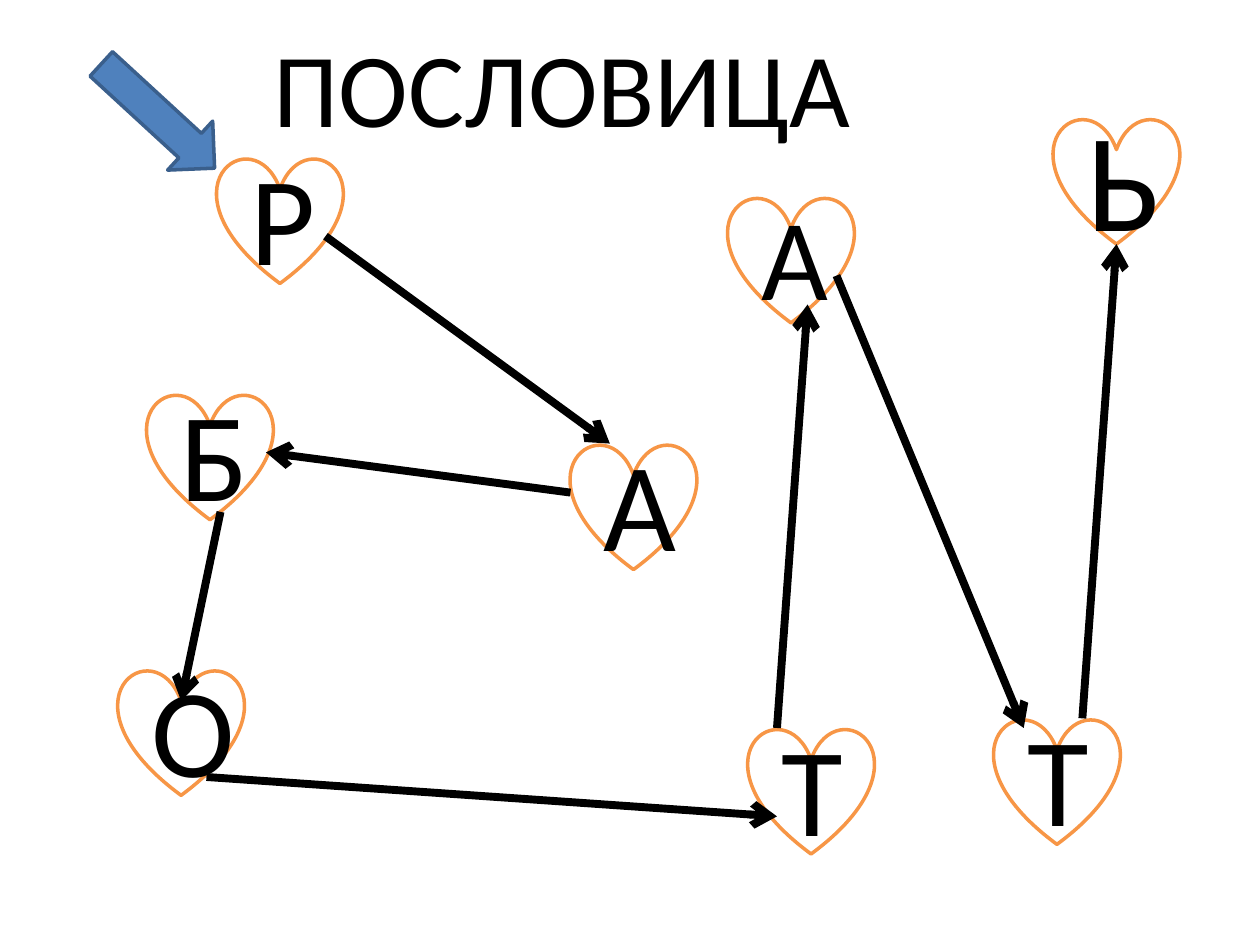
from lxml.etree import SubElement
from pptx import Presentation
from pptx.dml.color import RGBColor
from pptx.enum.shapes import MSO_CONNECTOR, MSO_SHAPE
from pptx.enum.text import MSO_ANCHOR, MSO_AUTO_SIZE, PP_ALIGN
from pptx.oxml.ns import qn
from pptx.util import Pt

COLORS = {"ink": "000000", "paper": "FFFFFF", "heart": "F79646",
          "start": "4F81BD", "start_edge": "3A5F8C"}
HEART_SIZE = 72

# Letter, left, top, letter size
HEARTS = [
    ("Р", 124, 90, 72),
    ("Б", 84, 225, 72),
    ("Т", 568, 410.5, 72),
    ("О", 67.5, 382.5, 72),
    ("А", 416, 112.5, 66),
    ("Ь", 602, 67.5, 80),
    ("А", 326, 253.5, 72),
    ("Т", 427.5, 416, 72),
]
# Steps in reading order: from, to
STEPS = [
    ((186, 135), (348.5, 253.5)),
    ((326, 281.5), (152, 258.5)),
    ((126, 292.5), (103.5, 400.5)),
    ((118, 444), (444, 466.5)),
    ((444, 416), (461.5, 174)),
    ((478, 157.5), (585, 416)),
    ((618.5, 410.5), (638, 139.5)),
]


def color(name):
    return RGBColor.from_string(COLORS[name])


def place(shape, box):
    for side, value in zip(("left", "top", "width", "height"), box):
        setattr(shape, side, Pt(value))


def write(frame, text, size):
    for name, value in {"text": text, "vertical_anchor": MSO_ANCHOR.MIDDLE,
                        "auto_size": MSO_AUTO_SIZE.NONE, "word_wrap": True}.items():
        setattr(frame, name, value)
    paragraph = frame.paragraphs[0]
    paragraph.alignment = PP_ALIGN.CENTER
    for name, value in {"name": "Calibri", "size": Pt(size)}.items():
        setattr(paragraph.font, name, value)
    paragraph.font.color.rgb = color("ink")


def add_outlined(slide, kind, box, fill, edge):
    shape = slide.shapes.add_shape(kind, *map(Pt, box))
    shape.shadow.inherit = False
    shape.fill.solid()
    shape.fill.fore_color.rgb = color(fill)
    shape.line.color.rgb = color(edge)
    shape.line.width = Pt(2)
    return shape


def add_title(slide, box):
    title = slide.shapes.title
    place(title, box)
    write(title.text_frame, "ПОСЛОВИЦА", 60)


def add_heart(slide, box, letter, size):
    heart = add_outlined(slide, MSO_SHAPE.HEART, box, "paper", "heart")
    write(heart.text_frame, letter, size)


def add_step(slide, start, end):
    step = slide.shapes.add_connector(MSO_CONNECTOR.STRAIGHT, *map(Pt, start + end))
    step.line.color.rgb = color("ink")
    step.line.width = Pt(4.5)
    SubElement(step.line._get_or_add_ln(), qn("a:tailEnd"), type="arrow")
    SubElement(step._element.spPr, qn("a:effectLst"))


def add_start_arrow(slide, box):
    arrow = add_outlined(slide, MSO_SHAPE.DOWN_ARROW, box, "start", "start_edge")
    arrow.rotation = 312.6


def main():
    deck = Presentation()
    deck.slide_width, deck.slide_height = Pt(720), Pt(540)
    slide = deck.slides.add_slide(deck.slide_layouts[5])

    add_title(slide, (36, 25, 570, 48))
    # Letters in hearts
    for letter, left, top, size in HEARTS:
        add_heart(slide, (left, top, HEART_SIZE, HEART_SIZE), letter, size)
    # Path through the letters
    for start, end in STEPS:
        add_step(slide, start, end)
    add_start_arrow(slide, (71.3, 22.3, 38, 88))

    deck.save("out.pptx")


if __name__ == "__main__":
    main()
